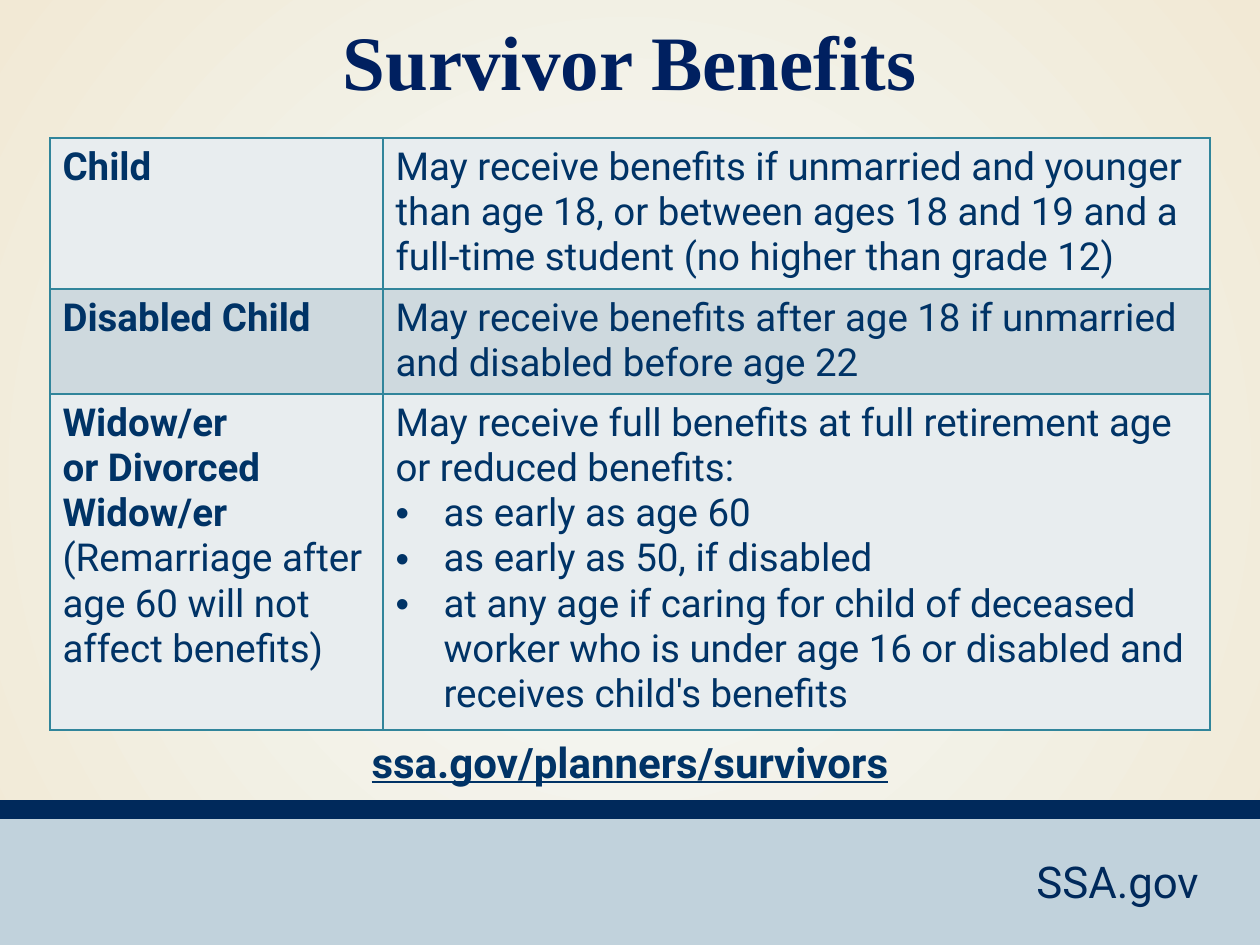
from lxml.etree import SubElement
from pptx import Presentation
from pptx.dml.color import RGBColor
from pptx.enum.shapes import MSO_SHAPE
from pptx.enum.text import MSO_ANCHOR, PP_ALIGN
from pptx.oxml.ns import qn
from pptx.util import Pt

EMU_PER_PX = 914400 / 126

CREAM = RGBColor(0xF2, 0xE9, 0xD5)
ICE = RGBColor(0xF3, 0xFA, 0xFB)
FOOTER_BLUE = RGBColor(0xC1, 0xD2, 0xDC)
NAVY = RGBColor(0x00, 0x29, 0x5B)
TITLE_BLUE = RGBColor(0x00, 0x20, 0x60)
TEXT_BLUE = RGBColor(0x00, 0x33, 0x66)
BORDER_TEAL = RGBColor(0x31, 0x85, 0x9B)
ROW_LIGHT = RGBColor(0xE8, 0xED, 0xEF)
ROW_DARK = RGBColor(0xCE, 0xD9, 0xDE)

COLUMN_WIDTHS = [333, 827]
ROW_HEIGHTS = [148, 104, 329]
BULLET = "•"
# Each cell is a list of (text, style); a style is "bold", "plain" or BULLET.
BENEFITS = [
    ([("Child", "bold")],
     [("May receive benefits if unmarried and younger than age 18, or between "
       "ages 18 and 19 and a full-time student (no higher than grade 12)", "plain")]),
    ([("Disabled Child", "bold")],
     [("May receive benefits after age 18 if unmarried and disabled before age 22",
       "plain")]),
    ([("Widow/er", "bold"),
      ("or Divorced Widow/er", "bold"),
      ("(Remarriage after age 60 will not affect benefits)", "plain")],
     [("May receive full benefits at full retirement age or reduced benefits:", "plain"),
      ("as early as age 60", BULLET),
      ("as early as 50, if disabled", BULLET),
      ("at any age if caring for child of deceased worker who is under age 16 "
       "or disabled and receives child's benefits", BULLET)]),
]


def px(length):
    return round(length * EMU_PER_PX)


def set_background(page):
    """Fill the page with a gradient that spreads from its centre."""
    fill = page.background.fill
    fill.gradient()
    for stop, color, position in zip(fill.gradient_stops, (ICE, CREAM), (0, 1)):
        stop.color.rgb = color
        stop.position = position
    gradient = page.element.find(".//" + qn("a:gradFill"))
    linear = gradient.find(qn("a:lin"))
    radial = SubElement(gradient, qn("a:path"), {"path": "circle"})
    gradient.replace(linear, radial)
    SubElement(radial, qn("a:fillToRect"), dict.fromkeys("ltrb", "50000"))


def add_band(page, top, height, color):
    band = page.shapes.add_shape(MSO_SHAPE.RECTANGLE, 0, px(top), px(1260), px(height))
    band.shadow.inherit = False
    band.fill.solid()
    band.fill.fore_color.rgb = color
    band.line.fill.background()


def style_run(span, size, color, bold=False, name="Roboto"):
    span.font.name = name
    span.font.size = Pt(size)
    span.font.bold = bold
    span.font.color.rgb = color


def add_centred_text(page, text, left, top, width, height, size, color, **style):
    box = page.shapes.add_textbox(px(left), px(top), px(width), px(height))
    frame = box.text_frame
    frame.word_wrap = True
    frame.text = text
    para = frame.paragraphs[0]
    para.alignment = PP_ALIGN.CENTER
    style_run(para.runs[0], size, color, **style)
    return box


def add_bullet(para):
    properties = para._p.get_or_add_pPr()
    properties.set("marL", str(px(48)))
    properties.set("indent", str(px(-48)))
    SubElement(properties, qn("a:buFont"), {"typeface": "Arial"})
    SubElement(properties, qn("a:buChar"), {"char": BULLET})


def set_borders(cell):
    properties = cell._tc.get_or_add_tcPr()
    for side in ("a:lnL", "a:lnR", "a:lnT", "a:lnB"):
        line = SubElement(properties, qn(side), {"w": str(Pt(1))})
        solid = SubElement(line, qn("a:solidFill"))
        SubElement(solid, qn("a:srgbClr"), {"val": str(BORDER_TEAL)})


def fill_cell(cell, content, color):
    set_borders(cell)
    cell.fill.solid()
    cell.fill.fore_color.rgb = color
    cell.vertical_anchor = MSO_ANCHOR.TOP
    frame = cell.text_frame
    frame.text = "\n".join(text for text, _ in content)
    for para, (_, style) in zip(frame.paragraphs, content):
        if style == BULLET:
            add_bullet(para)
        style_run(para.runs[0], 22, TEXT_BLUE, bold=style == "bold")


def add_benefits_table(page):
    frame = page.shapes.add_table(
        len(ROW_HEIGHTS), len(COLUMN_WIDTHS), px(50), px(138),
        px(sum(COLUMN_WIDTHS)), px(sum(ROW_HEIGHTS)))
    table = frame.table
    table.first_row = False
    table.horz_banding = False
    for column, width in zip(table.columns, COLUMN_WIDTHS):
        column.width = px(width)
    for index, (row, height) in enumerate(zip(table.rows, ROW_HEIGHTS)):
        row.height = px(height)
        color = ROW_DARK if index % 2 else ROW_LIGHT
        for cell, content in zip(row.cells, BENEFITS[index]):
            fill_cell(cell, content, color)


def main():
    deck = Presentation()
    deck.slide_width, deck.slide_height = px(1260), px(945)
    page = deck.slides.add_slide(deck.slide_layouts[6])

    set_background(page)
    add_band(page, 813, 132, FOOTER_BLUE)
    add_band(page, 800, 19, NAVY)
    add_centred_text(page, "SSA.gov", 988, 849, 259, 66, 25, NAVY)
    title = add_centred_text(page, "Survivor Benefits", 0, 0, 1260, 92, 44, TITLE_BLUE,
                             bold=True, name="Times New Roman")
    title.text_frame.margin_top = px(14)
    add_benefits_table(page)
    link = add_centred_text(page, "ssa.gov/planners/survivors", 128, 730, 1004, 63,
                            24, TEXT_BLUE, bold=True)
    link.text_frame.paragraphs[0].runs[0].font.underline = True

    deck.save("out.pptx")


if __name__ == "__main__":
    main()
